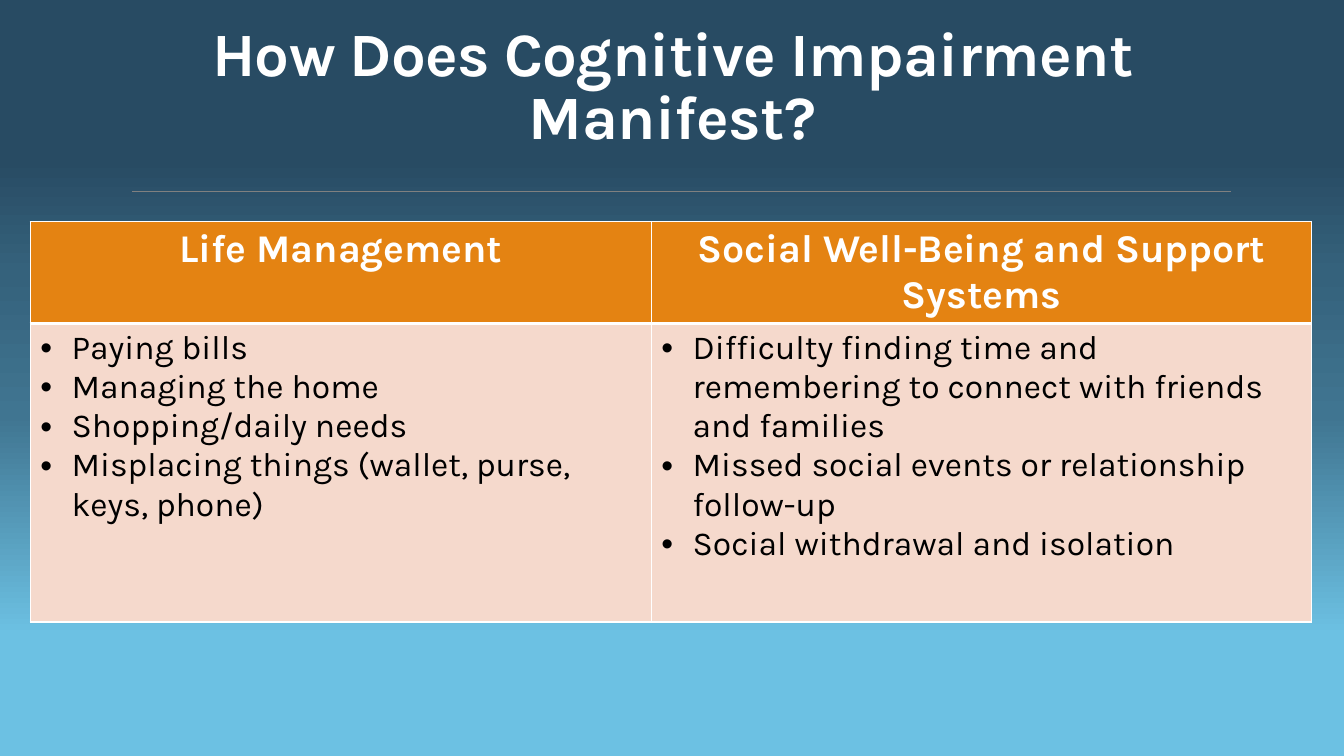
from dataclasses import dataclass

from pptx import Presentation
from pptx.dml.color import RGBColor
from pptx.enum.shapes import MSO_CONNECTOR
from pptx.enum.text import MSO_ANCHOR, MSO_AUTO_SIZE, PP_ALIGN
from pptx.oxml.ns import qn
from pptx.util import Pt
from lxml.etree import SubElement

EMU_PER_PX = 9144


@dataclass(frozen=True)
class Theme:
    font: str = "Karla"
    white: str = "FFFFFF"
    black: str = "000000"
    rule: str = "808080"
    header_fill: str = "E48312"
    body_fill: str = "F5D9CC"
    background: tuple = ((21, "284B63"), (36, "35627C"), (55, "407591"), (84, "6CC1E3"))
    title_size: int = 44
    header_size: int = 28
    body_size: int = 24


THEME = Theme()

TITLE = "How Does Cognitive Impairment Manifest?"
COLUMNS = [
    ("Life Management", 616, [
        "Paying bills",
        "Managing the home",
        "Shopping/daily needs",
        "Misplacing things (wallet, purse, keys, phone)",
    ]),
    ("Social Well-Being and Support Systems", 655, [
        "Difficulty finding time and remembering to connect with friends and families",
        "Missed social events or relationship follow-up",
        "Social withdrawal and isolation",
    ]),
]
ROW_HEIGHTS = (101, 296)
BULLET_INDENT = 31


def px(length):
    return length * EMU_PER_PX


def color(value):
    return RGBColor.from_string(value)


def style_paragraph(paragraph, size, text_color, bold):
    font = paragraph.font
    font.name = THEME.font
    font.size = Pt(size)
    font.bold = bold
    font.color.rgb = color(text_color)


def paint_background(slide):
    fill = slide.background.fill
    fill.gradient()
    fill.gradient_angle = 270
    stops = slide.element.find(".//" + qn("a:gsLst"))
    for stop in list(stops):
        stops.remove(stop)
    for percent, value in THEME.background:
        stop = SubElement(stops, qn("a:gs"), pos=str(percent * 1000))
        SubElement(stop, qn("a:srgbClr"), val=value)


def add_title(slide, left, top, width, height):
    title = slide.shapes.title
    title.left, title.top, title.width, title.height = map(px, (left, top, width, height))
    frame = title.text_frame
    frame.text = TITLE
    frame.word_wrap = True
    frame.auto_size = MSO_AUTO_SIZE.NONE
    frame.vertical_anchor = MSO_ANCHOR.BOTTOM
    paragraph = frame.paragraphs[0]
    paragraph.alignment = PP_ALIGN.CENTER
    paragraph.line_spacing = 0.85
    style_paragraph(paragraph, THEME.title_size, THEME.white, True)
    paragraph.runs[0].font._element.set("spc", "-50")


def add_rule(slide, left, right, top):
    rule = slide.shapes.add_connector(
        MSO_CONNECTOR.STRAIGHT, px(left), px(top), px(right), px(top))
    rule.line.color.rgb = color(THEME.rule)
    rule.line.width = Pt(0.5)
    SubElement(rule._element.spPr, qn("a:effectLst"))


def style_cell(cell, fill_color, top_width, bottom_width):
    """Set the cell's white borders, then its fill, in schema order."""
    properties = cell._tc.get_or_add_tcPr()
    for side, width in (("L", 1), ("R", 1), ("T", top_width), ("B", bottom_width)):
        border = SubElement(properties, qn(f"a:ln{side}"), w=str(Pt(width)))
        fill = SubElement(border, qn("a:solidFill"))
        SubElement(fill, qn("a:srgbClr"), val=THEME.white)
    cell.fill.solid()
    cell.fill.fore_color.rgb = color(fill_color)


def add_bullet(paragraph):
    properties = paragraph._p.get_or_add_pPr()
    properties.set("marL", str(px(BULLET_INDENT)))
    properties.set("indent", str(-px(BULLET_INDENT)))
    SubElement(properties, qn("a:buFont"), typeface="Arial")
    SubElement(properties, qn("a:buChar"), char="•")


def fill_header(cell, heading):
    style_cell(cell, THEME.header_fill, 1, 3)
    cell.text = heading
    paragraph = cell.text_frame.paragraphs[0]
    paragraph.alignment = PP_ALIGN.CENTER
    style_paragraph(paragraph, THEME.header_size, THEME.white, True)


def fill_body(cell, items):
    style_cell(cell, THEME.body_fill, 3, 1)
    cell.text = "\n".join(items)
    for paragraph in cell.text_frame.paragraphs:
        add_bullet(paragraph)
        style_paragraph(paragraph, THEME.body_size, THEME.black, False)


def add_manifestation_table(slide, left, top):
    width = sum(column_width for _, column_width, _ in COLUMNS)
    table = slide.shapes.add_table(
        len(ROW_HEIGHTS), len(COLUMNS),
        px(left), px(top), px(width), px(sum(ROW_HEIGHTS))).table
    table.horz_banding = False
    for row, height in zip(table.rows, ROW_HEIGHTS):
        row.height = px(height)
    for index, (heading, column_width, items) in enumerate(COLUMNS):
        table.columns[index].width = px(column_width)
        fill_header(table.cell(0, index), heading)
        fill_body(table.cell(1, index), items)


def main():
    presentation = Presentation()
    presentation.slide_width = px(1333)
    presentation.slide_height = px(750)
    slide = presentation.slides.add_slide(presentation.slide_layouts.get_by_name("Title Only"))
    paint_background(slide)
    add_rule(slide, 131, 1221, 190)
    add_title(slide, 117, 46, 1100, 110)
    add_manifestation_table(slide, 30, 220)
    presentation.save("out.pptx")


if __name__ == "__main__":
    main()
